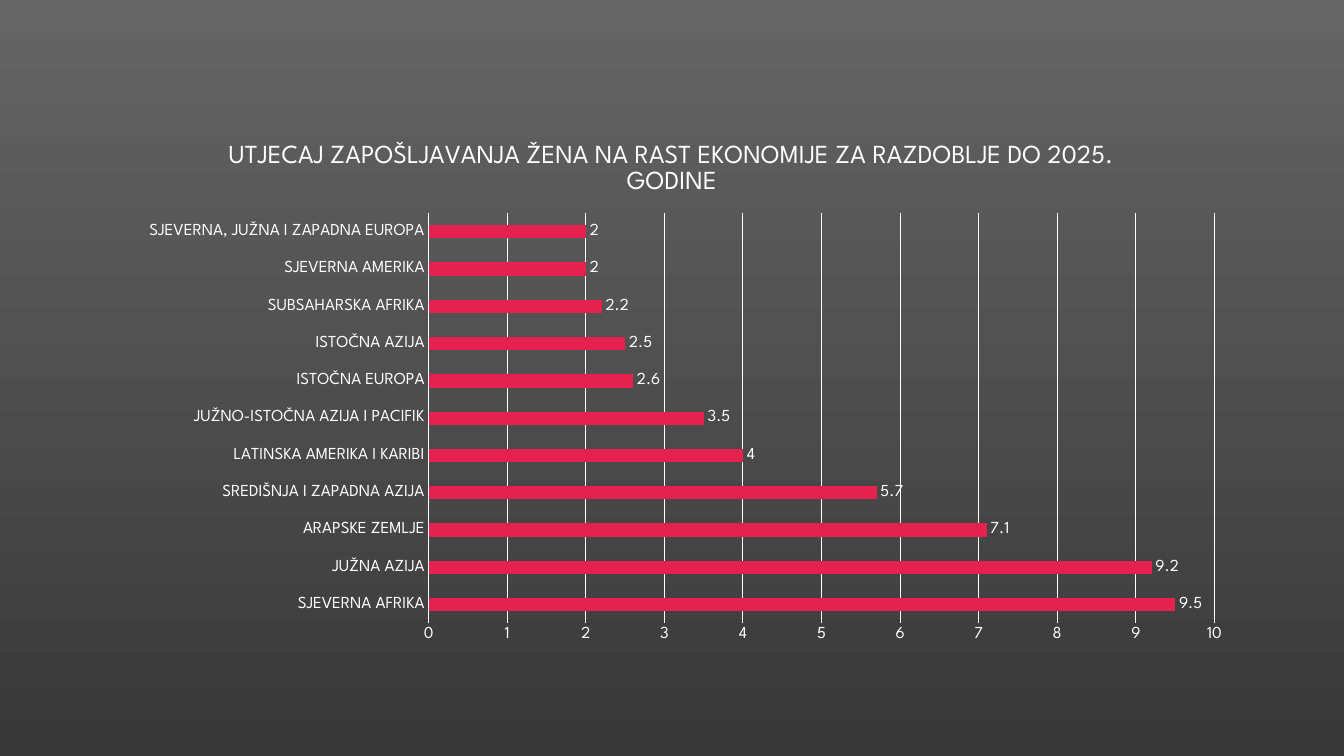
from typing import NamedTuple

from pptx import Presentation
from pptx import util as u
from pptx.chart.data import CategoryChartData
from pptx.dml.color import RGBColor
from pptx.enum import chart as charts
from pptx.oxml import parse_xml
from pptx.oxml.ns import nsdecls, qn

FONT = "League Spartan"
WHITE = "FFFFFF"
RED = "E5224E"
TITLE = "UTJECAJ ZAPOŠLJAVANJA ŽENA NA RAST EKONOMIJE ZA RAZDOBLJE DO 2025. GODINE"


class Region(NamedTuple):
    name: str
    growth: float


REGIONS = [
    Region("SJEVERNA AFRIKA", 9.5),
    Region("JUŽNA AZIJA", 9.2),
    Region("ARAPSKE ZEMLJE", 7.1),
    Region("SREDIŠNJA I ZAPADNA AZIJA", 5.7),
    Region("LATINSKA AMERIKA I KARIBI", 4),
    Region("JUŽNO-ISTOČNA AZIJA I PACIFIK", 3.5),
    Region("ISTOČNA EUROPA", 2.6),
    Region("ISTOČNA AZIJA", 2.5),
    Region("SUBSAHARSKA AFRIKA", 2.2),
    Region("SJEVERNA AMERIKA", 2),
    Region("SJEVERNA, JUŽNA I ZAPADNA EUROPA", 2),
]


def px(length: int) -> int:
    return round(length * 914400 / 100.8)


def color(value: str) -> RGBColor:
    return RGBColor.from_string(value)


def style_font(font, size: float) -> None:
    font.name = FONT
    font.size = u.Pt(size)
    font.bold = False
    font.color.rgb = color(WHITE)


def style_line(line) -> None:
    line.color.rgb = color(WHITE)
    line.width = u.Pt(0.75)


def paint_background(page) -> None:
    fill = page.background.fill
    fill.gradient()
    fill.gradient_angle = 270
    for stop, value in zip(fill.gradient_stops, ("656565", "383838")):
        stop.color.rgb = color(value)
    for position, stop in enumerate(fill.gradient_stops):
        stop.position = position


def place_plot(chart, x: float, y: float, w: float, h: float) -> None:
    area = chart.element.find(".//" + qn("c:plotArea"))
    for layout in area.findall(qn("c:layout")):
        area.remove(layout)
    sizes = "".join(
        f'<c:{key} val="{value}"/>' for key, value in zip("xywh", (x, y, w, h))
    )
    area.insert(0, parse_xml(
        f'<c:layout {nsdecls("c")}><c:manualLayout><c:layoutTarget val="inner"/>'
        f'<c:xMode val="edge"/><c:yMode val="edge"/>{sizes}'
        "</c:manualLayout></c:layout>"
    ))


def style_axes(chart) -> None:
    for axis in (chart.category_axis, chart.value_axis):
        axis.major_tick_mark = charts.XL_TICK_MARK.NONE
        axis.minor_tick_mark = charts.XL_TICK_MARK.NONE
        style_font(axis.tick_labels.font, 12)
    style_line(chart.category_axis.format.line)
    values = chart.value_axis
    values.format.line.fill.background()
    values.has_major_gridlines = True
    style_line(values.major_gridlines.format.line)
    values.minimum_scale = 0
    values.maximum_scale = 10
    values.major_unit = 1


def add_growth_chart(page) -> None:
    data = CategoryChartData()
    data.categories = [region.name for region in REGIONS]
    data.add_series("Series 1", [region.growth for region in REGIONS])
    frame = page.shapes.add_chart(
        charts.XL_CHART_TYPE.BAR_CLUSTERED,
        px(101), px(121), px(1142), px(542), data,
    )
    chart = frame.chart
    style_font(chart.font, 10)
    chart.has_legend = False
    chart.has_title = True
    chart.chart_title.include_in_layout = False
    heading = chart.chart_title.text_frame
    heading.text = TITLE
    style_font(heading.paragraphs[0].runs[0].font, 18.6)
    style_axes(chart)

    plot = chart.plots[0]
    plot.gap_width = 182
    plot.vary_by_categories = False
    bars = plot.series[0]
    bars.format.fill.solid()
    bars.format.fill.fore_color.rgb = color(RED)
    labels = bars.data_labels
    labels.show_value = True
    labels.position = charts.XL_LABEL_POSITION.OUTSIDE_END
    style_font(labels.font, 12)
    place_plot(chart, 0.287, 0.17, 0.688, 0.757)


def main() -> None:
    deck = Presentation()
    deck.slide_width = px(1344)
    deck.slide_height = px(756)
    page = deck.slides.add_slide(deck.slide_layouts[6])
    paint_background(page)
    add_growth_chart(page)
    deck.save("out.pptx")


if __name__ == "__main__":
    main()
